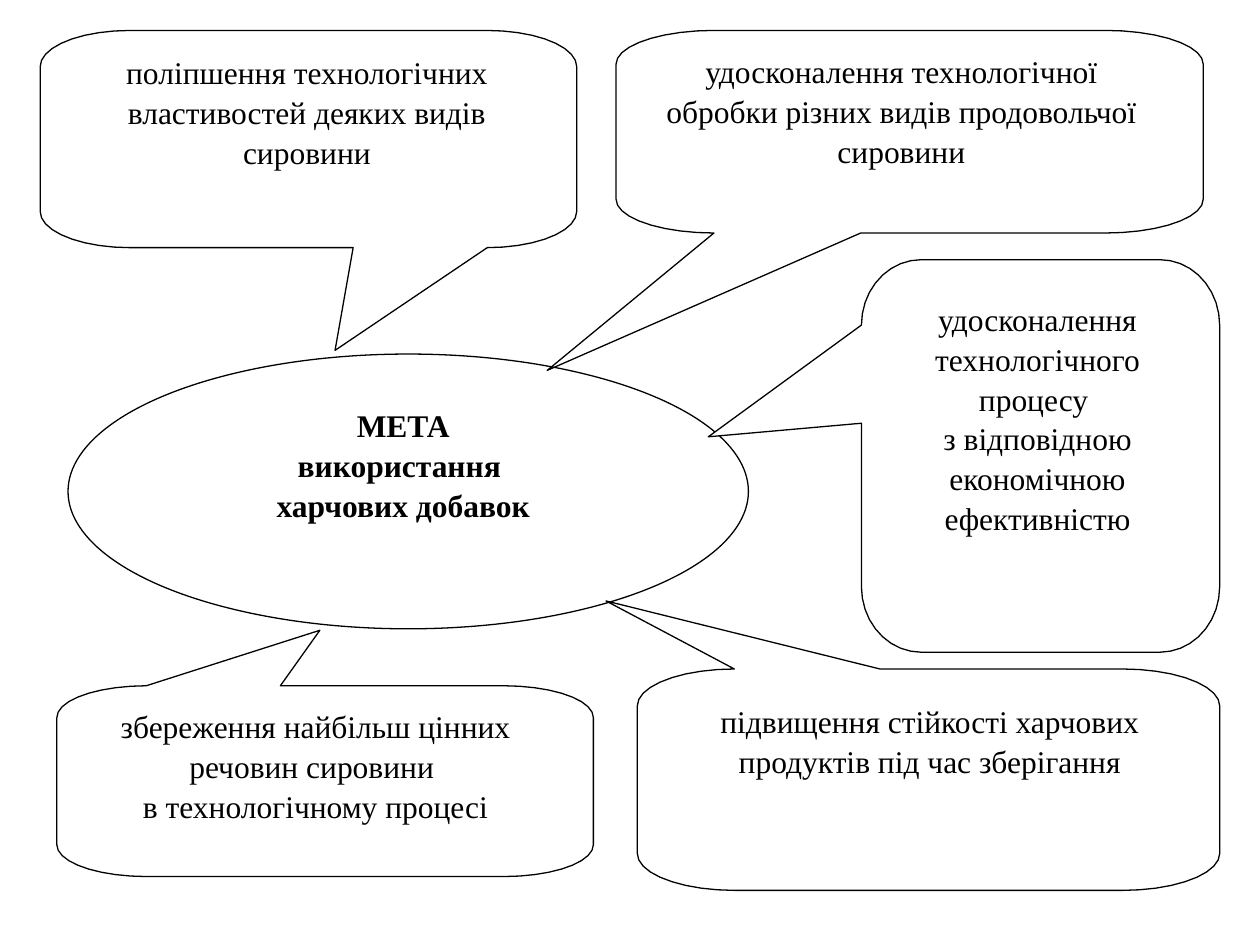
from math import cos, radians, sin

from pptx import Presentation
from pptx.dml.color import RGBColor
from pptx.enum.shapes import MSO_SHAPE
from pptx.enum.text import PP_ALIGN
from pptx.util import Pt

BLACK, WHITE = "000000", "FFFFFF"
FONT, FONT_SIZE, LINE_SPACING = "Times New Roman", 18, 1.05

# Central idea: ellipse and text boxes are (left, top, width, height)
GOAL = {
    "ellipse": (38.9, 202.3, 388.8, 157),
    "text_box": (112.3, 231.1, 236.2, 89.3),
    "lines": ["МЕТА", "використання ", "харчових добавок"],
}

# Bodies are (left, top, right, bottom); "start" and "end" of the wedge
# are twelfths of the side it grows from
CALLOUTS = [
    {"body": (23, 17.4, 329.6, 141.5), "side": "bottom", "start": 7, "end": 10,
     "tip": (191.5, 200.2), "fill": None, "text_box": (45.4, 29.5, 259.9, 89.3),
     "lines": ["поліпшення технологічних властивостей деяких видів сировини"]},
    {"body": (352.1, 17.4, 687.6, 133.2), "side": "bottom", "start": 2, "end": 5,
     "tip": (312.7, 211.7), "fill": None, "text_box": (375.8, 28.8, 278.6, 89.3),
     "lines": ["удосконалення технологічної обробки різних видів продовольчої сировини"]},
    {"body": (492.3, 148.4, 697, 372.7), "side": "left", "start": 2, "end": 5,
     "tip": (404.8, 249.6), "fill": WHITE, "text_box": (505.4, 170.6, 175, 178.6),
     "lines": ["удосконалення технологічного процесу ",
               "з відповідною економічною ефективністю"]},
    {"body": (32.5, 391.9, 339.1, 500.9), "side": "top", "start": 2, "end": 5,
     "tip": (182.8, 360.2), "fill": None, "text_box": (54.7, 403.2, 251.3, 88.6),
     "lines": ["збереження найбільш цінних речовин сировини ",
               "в технологічному процесі"]},
    {"body": (364.2, 382.3, 697, 508.8), "side": "top", "start": 2, "end": 5,
     "tip": (346.3, 343.4), "fill": WHITE, "text_box": (382.3, 400.3, 298.1, 89.3),
     "lines": ["підвищення стійкості харчових продуктів під час зберігання"]},
]


def color(value):
    return RGBColor.from_string(value)


def style(shape, fill):
    shape.shadow.inherit = False
    if fill:
        shape.fill.solid()
        shape.fill.fore_color.rgb = color(fill)
    else:
        shape.fill.background()
    shape.line.color.rgb = color(BLACK)
    shape.line.width = Pt(0.75)


def callout_points(body, side, start, end, tip):
    """Clockwise outline: corner radii are a sixth of the width and height."""
    left, top, right, bottom = body
    width, height = right - left, bottom - top
    radius_x, radius_y = width / 6, height / 6

    def corner(center_x, center_y, first_angle):
        angles = [radians(first_angle + step) for step in range(0, 91, 10)]
        return [(center_x + radius_x * cos(a), center_y + radius_y * sin(a))
                for a in angles]

    def wedge(name):
        if name != side:
            return []
        if name == "left":
            ends = [(left, top + height * part / 12) for part in (end, start)]
        else:
            edge = top if name == "top" else bottom
            parts = (start, end) if name == "top" else (end, start)
            ends = [(left + width * part / 12, edge) for part in parts]
        return [ends[0], tip, ends[1]]

    return (corner(left + radius_x, top + radius_y, 180) + wedge("top")
            + corner(right - radius_x, top + radius_y, 270)
            + corner(right - radius_x, bottom - radius_y, 0) + wedge("bottom")
            + corner(left + radius_x, bottom - radius_y, 90) + wedge("left"))


def add_callout(slide, callout):
    points = callout_points(*(callout[key] for key in ("body", "side", "start", "end", "tip")))
    first, *rest = [(Pt(x), Pt(y)) for x, y in points]
    builder = slide.shapes.build_freeform(*first)
    builder.add_line_segments(rest, close=True)
    style(builder.convert_to_shape(), callout["fill"])


def add_text(slide, item, bold=False):
    frame = slide.shapes.add_textbox(*map(Pt, item["text_box"])).text_frame
    frame.word_wrap = True
    frame.margin_left = frame.margin_right = frame.margin_top = frame.margin_bottom = 0
    frame.text = "\n".join(item["lines"])
    for paragraph in frame.paragraphs:
        paragraph.alignment = PP_ALIGN.CENTER
        paragraph.line_spacing = LINE_SPACING
        font = paragraph.font
        font.name, font.size, font.bold = FONT, Pt(FONT_SIZE), bold
        font.color.rgb = color(BLACK)


presentation = Presentation()
presentation.slide_width, presentation.slide_height = Pt(720), Pt(540)
slide = presentation.slides.add_slide(presentation.slide_layouts[6])

# Shapes
ellipse = slide.shapes.add_shape(MSO_SHAPE.OVAL, *map(Pt, GOAL["ellipse"]))
style(ellipse, None)
for callout in CALLOUTS:
    add_callout(slide, callout)

# Texts
add_text(slide, GOAL, bold=True)
for callout in CALLOUTS:
    add_text(slide, callout)

presentation.save("out.pptx")
